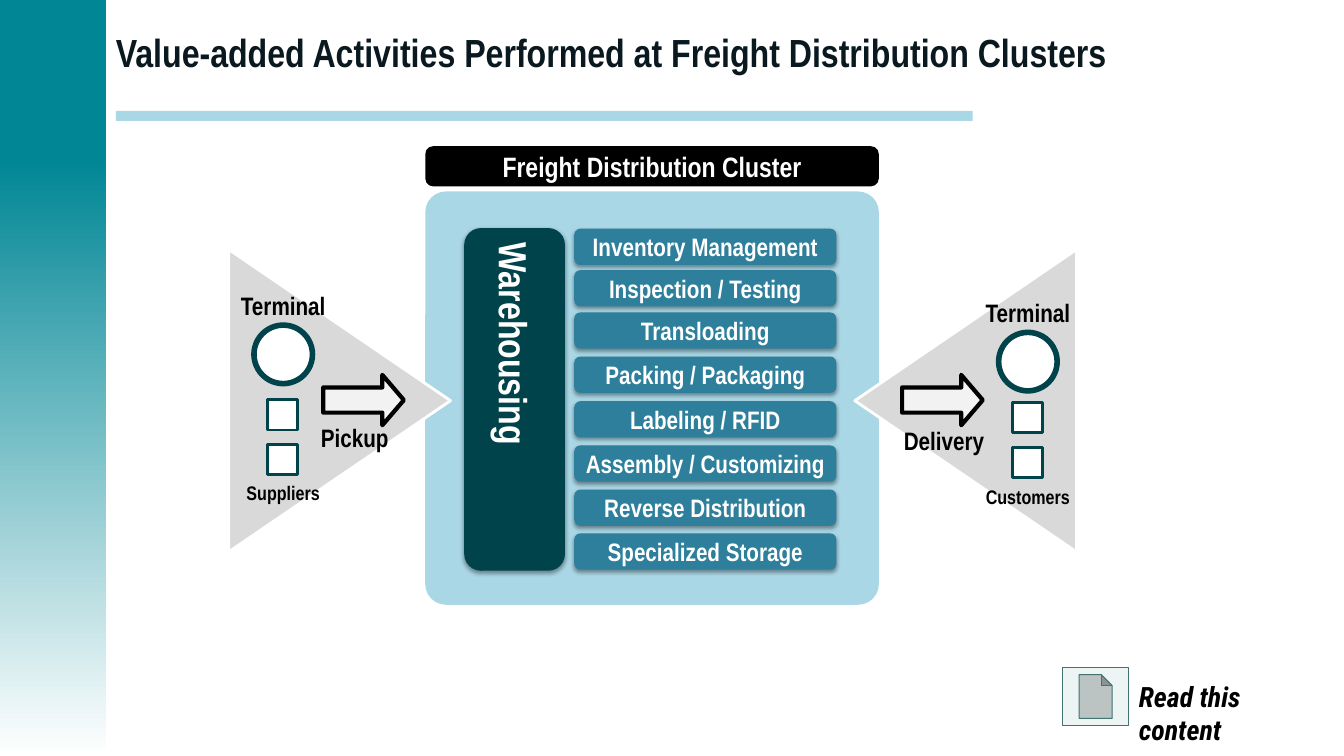
from lxml import etree
from pptx import Presentation
from pptx.dml.color import RGBColor
from pptx.enum.shapes import MSO_SHAPE
from pptx.enum.text import MSO_ANCHOR, PP_ALIGN
from pptx.oxml.ns import qn
from pptx.util import Pt

RECTANGLE = MSO_SHAPE.RECTANGLE
ROUNDED = MSO_SHAPE.ROUNDED_RECTANGLE
TRIANGLE = MSO_SHAPE.ISOSCELES_TRIANGLE
ARROW = MSO_SHAPE.RIGHT_ARROW
CIRCLE = MSO_SHAPE.OVAL
DOCUMENT_BUTTON = MSO_SHAPE.ACTION_BUTTON_DOCUMENT
CENTER, LEFT = PP_ALIGN.CENTER, PP_ALIGN.LEFT
MIDDLE, TOP = MSO_ANCHOR.MIDDLE, MSO_ANCHOR.TOP

FONT = "Arial Narrow"
BLACK, WHITE = "000000", "FFFFFF"
TEAL, DARK_TEAL, PALE_BLUE, BLUE = "008695", "00434A", "AAD7E6", "2D7F9B"
GRAY, LIGHT_GRAY = "D9D9D9", "F2F2F2"

ACTIVITIES = [
    ("Inventory Management", 163.4),
    ("Inspection / Testing", 193),
    ("Transloading", 223.2),
    ("Packing / Packaging", 254.7),
    ("Labeling / RFID", 286.6),
    ("Assembly / Customizing", 318.2),
    ("Reverse Distribution", 349.7),
    ("Specialized Storage", 381),
]


def rgb(value):
    """Return the colour for a hex string."""
    return RGBColor.from_string(value)


def add_block(slide, kind, box, fill, line=None, line_width=0, adjustments=()):
    """Add a flat preset shape with an optional outline."""
    shape = slide.shapes.add_shape(kind, *map(Pt, box))
    shape.shadow.inherit = False
    shape.fill.solid()
    shape.fill.fore_color.rgb = rgb(fill)
    if line:
        shape.line.color.rgb = rgb(line)
        shape.line.width = Pt(line_width)
    else:
        shape.line.fill.background()
    for index, value in enumerate(adjustments):
        shape.adjustments[index] = value
    return shape


def add_shadow(shape):
    """Give a shape a soft shadow below it."""
    effects = shape.element.spPr.find(qn("a:effectLst"))
    shadow = etree.SubElement(
        effects, qn("a:outerShdw"), blurRad=str(Pt(3.1)), dist=str(Pt(1.6)),
        dir="5400000", algn="t", rotWithShape="0")
    color = etree.SubElement(shadow, qn("a:srgbClr"), val=BLACK)
    etree.SubElement(color, qn("a:alpha"), val="38000")


def write(shape, text, size, color, alignment=CENTER, anchor=MIDDLE, wrap=False, font=FONT):
    """Write one bold paragraph into a shape."""
    frame = shape.text_frame
    frame.word_wrap = wrap
    frame.vertical_anchor = anchor
    paragraph = frame.paragraphs[0]
    paragraph.text = text
    paragraph.alignment = alignment
    paragraph.font.name = font
    paragraph.font.size = Pt(size)
    paragraph.font.bold = True
    paragraph.font.color.rgb = rgb(color)
    return paragraph


def add_label(slide, text, center, top, size=18, width=68):
    """Add a black label centred on a horizontal position."""
    label = slide.shapes.add_textbox(Pt(center - width / 2), Pt(top), Pt(width), Pt(size * 1.2))
    frame = label.text_frame
    frame.margin_left = frame.margin_right = frame.margin_top = frame.margin_bottom = 0
    write(label, text, size, BLACK, anchor=TOP)


def add_sidebar(slide):
    """Add the teal band that fades out down the left edge."""
    add_block(slide, RECTANGLE, (0, 0, 75.6, 113), TEAL)
    fade = add_block(slide, RECTANGLE, (0, 113, 75.6, 427), TEAL)
    fade.fill.gradient()
    fade.fill.gradient_angle = 270
    for stop, color in zip(fade.fill.gradient_stops, (TEAL, WHITE)):
        stop.color.rgb = rgb(color)


def add_heading(slide):
    """Add the title and the rule below it."""
    add_block(slide, RECTANGLE, (82.8, 79.2, 612, 7.2), PALE_BLUE)
    title = slide.shapes.add_textbox(Pt(75.6), Pt(0.7), Pt(862.6), Pt(72))
    write(title, "Value-added Activities Performed at Freight Distribution Clusters",
          28, "09191F", LEFT, wrap=True)


def add_cluster(slide):
    """Add the cluster header, warehousing bar and activities."""
    header = add_block(slide, ROUNDED, (303.8, 104.4, 324, 28.8), BLACK, adjustments=(0.2,))
    write(header, "Freight Distribution Cluster", 20, WHITE, wrap=True)
    warehousing = add_block(slide, ROUNDED, (331.6, 162.9, 72, 244.8), DARK_TEAL)
    add_shadow(warehousing)
    write(warehousing, "Warehousing", 28, WHITE)
    warehousing.element.txBody.find(qn("a:bodyPr")).set("vert", "eaVert")
    for name, top in ACTIVITIES:
        activity = add_block(slide, ROUNDED, (410.2, top, 187.2, 25.9), BLUE)
        add_shadow(activity)
        write(activity, name, 18, WHITE)


def add_funnel(slide, left, rotation):
    """Add a gray triangle pointing into the cluster."""
    funnel = add_block(slide, TRIANGLE, (left, 207, 216, 158.4), GRAY, WHITE, 2)
    funnel.rotation = rotation


def add_site(slide, party, center, terminal_top, square_top, party_top):
    """Add a terminal with its two sites and the party's name."""
    add_label(slide, "Terminal", center, terminal_top)
    add_block(slide, CIRCLE, (center - 20.9, terminal_top + 24.8, 41.8, 41.8),
              WHITE, DARK_TEAL, 4)
    for row in range(2):
        add_block(slide, RECTANGLE, (center - 11.2, square_top + 32 * row, 21.6, 21.6),
                  WHITE, DARK_TEAL, 2)
    add_label(slide, party, center, party_top, 14)


def add_flow(slide, text, left, label_center, label_top):
    """Add a flow arrow and its label."""
    add_block(slide, ARROW, (left, 267.8, 57.6, 36), LIGHT_GRAY, BLACK, 3, (0.5, 0.427))
    add_label(slide, text, label_center, label_top)


def add_reading_note(slide):
    """Add the document button and its caption."""
    add_block(slide, DOCUMENT_BUTTON, (758.9, 476.6, 47.5, 41.8), "ECF4F4", "427272", 0.75)
    caption = slide.shapes.add_textbox(Pt(806.4), Pt(481.7), Pt(133.9), Pt(31.7))
    paragraph = write(caption, "Read this content", 20, BLACK, LEFT, TOP, True,
                      "Roboto Condensed")
    paragraph.font.italic = True


def main():
    """Build and save the slide."""
    presentation = Presentation()
    presentation.slide_width, presentation.slide_height = Pt(960), Pt(540)
    slide = presentation.slides.add_slide(presentation.slide_layouts[6])
    add_sidebar(slide)
    add_heading(slide)
    add_reading_note(slide)
    add_block(slide, ROUNDED, (303.8, 136.8, 324, 295.2), PALE_BLUE, adjustments=(0.05,))
    add_funnel(slide, 581.8, 270)
    add_funnel(slide, 134.6, 90)
    add_cluster(slide)
    add_site(slide, "Suppliers", 202.3, 207.4, 285.6, 343.4)
    add_site(slide, "Customers", 734.2, 212.6, 287.5, 346.3)
    add_flow(slide, "Pickup", 230.9, 253.4, 302)
    add_flow(slide, "Delivery", 644.4, 674.3, 303.8)
    presentation.save("out.pptx")


if __name__ == "__main__":
    main()
